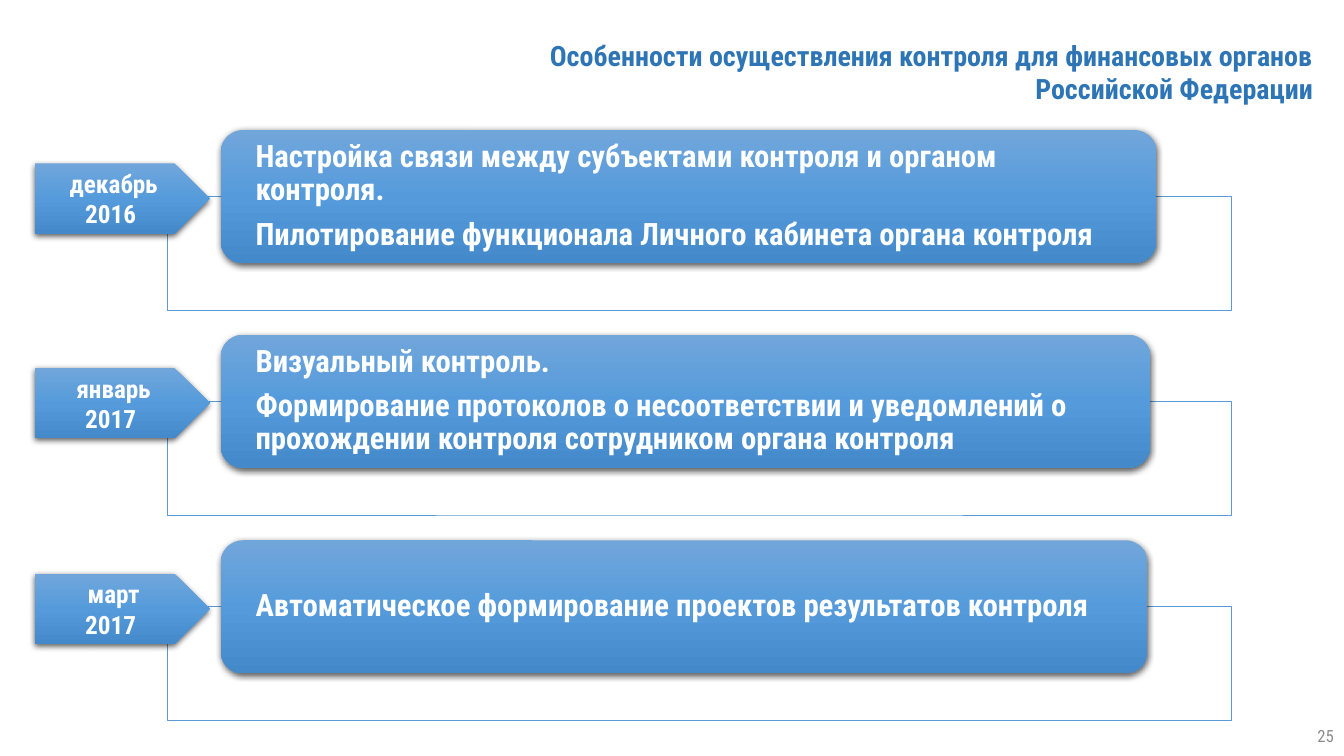
from lxml import etree
from pptx import Presentation
from pptx.dml.color import RGBColor as RGB
from pptx.enum.shapes import MSO_SHAPE as SHAPE
from pptx.enum.text import MSO_ANCHOR as ANCHOR, PP_ALIGN as ALIGN
from pptx.oxml import parse_xml
from pptx.oxml.ns import qn
from pptx.util import Pt

PX = 9144
FONT = "Roboto Condensed"
COLORS = {"white": "FFFFFF", "title": "2E75B6", "outline": "5B9BD5", "number": "8C8C8C",
          "shadow": "000000", "top": "71A6DB", "middle": "559BDB", "bottom": "448ACA"}
NS = 'xmlns:a="http://schemas.openxmlformats.org/drawingml/2006/main"'
STAGES = [
    (["декабрь", "2016 "], 928,
     ["Настройка связи между субъектами контроля и органом контроля.",
      "Пилотирование функционала Личного кабинета органа контроля"]),
    (["январь", "2017 "], 922,
     ["Визуальный контроль.",
      "Формирование протоколов о несоответствии и уведомлений о прохождении контроля "
      "сотрудником органа контроля"]),
    (["март", "2017 "], 919,
     ["Автоматическое формирование проектов результатов контроля"]),
]


def px(*lengths):
    """Turn px lengths into EMU."""
    return [length * PX for length in lengths]


def write(frame, lines, size, color, align, bold=True):
    """Fill a text frame with equally formatted paragraphs."""
    frame.word_wrap = True
    frame.text = "\n".join(lines)
    for paragraph in frame.paragraphs:
        paragraph.alignment = align
        for run in paragraph.runs:
            run.font.name = FONT
            run.font.size = Pt(size)
            run.font.bold = bold
            run.font.color.rgb = RGB.from_string(COLORS[color])


def add_glossy(slide, kind, box):
    """Add a borderless shape with the blue gradient and a soft shadow."""
    glossy = slide.shapes.add_shape(kind, *px(*box))
    glossy.line.fill.background()
    glossy.fill.background()
    stops = "".join(
        f'<a:gs pos="{pos}"><a:srgbClr val="{COLORS[name]}"/></a:gs>'
        for pos, name in ((0, "top"), (50000, "middle"), (100000, "bottom")))
    gradient = parse_xml(f'<a:gradFill {NS} rotWithShape="1"><a:gsLst>{stops}</a:gsLst>'
                         '<a:lin ang="5400000" scaled="0"/></a:gradFill>')
    properties = glossy.element.spPr
    properties.replace(properties.find(qn("a:noFill")), gradient)
    glossy.shadow.inherit = False
    properties.find(qn("a:effectLst")).append(parse_xml(
        f'<a:outerShdw {NS} blurRad="57150" dist="19050" dir="5400000" algn="ctr" rotWithShape="0">'
        f'<a:srgbClr val="{COLORS["shadow"]}"><a:alpha val="63000"/></a:srgbClr></a:outerShdw>'))
    return glossy


def add_outline(slide, box):
    """Add the thin translucent frame behind a stage card."""
    outline = slide.shapes.add_shape(SHAPE.RECTANGLE, *px(*box))
    outline.shadow.inherit = False
    outline.fill.solid()
    outline.fill.fore_color.rgb = RGB.from_string(COLORS["white"])
    white = outline.element.spPr.find(qn("a:solidFill")).find(qn("a:srgbClr"))
    etree.SubElement(white, qn("a:alpha")).set("val", "90000")
    outline.line.color.rgb = RGB.from_string(COLORS["outline"])
    outline.line.width = Pt(0.5)


def add_stage(slide, left, top, date, card_width, tasks):
    """Add one stage: frame, task card and date arrow."""
    add_outline(slide, (left + 131, top + 66, 1055, 113))
    card = add_glossy(slide, SHAPE.ROUNDED_RECTANGLE, (left + 184, top, card_width, 132))
    frame = card.text_frame
    frame.margin_left = frame.margin_right = 28 * PX
    frame.margin_top = frame.margin_bottom = 0
    frame.vertical_anchor = ANCHOR.MIDDLE
    write(frame, tasks, 22, "white", ALIGN.LEFT)
    for paragraph in frame.paragraphs:
        paragraph.line_spacing = 0.9
        paragraph.space_after = Pt(8)
    arrow = add_glossy(slide, SHAPE.PENTAGON, (left, top + 33, 173, 70))
    arrow.text_frame.vertical_anchor = ANCHOR.MIDDLE
    write(arrow.text_frame, date, 18, "white", ALIGN.CENTER)


def add_label(slide, box, text, size, color, bold, anchor):
    """Add a right-aligned text box."""
    label = slide.shapes.add_textbox(*px(*box))
    label.text_frame.vertical_anchor = anchor
    write(label.text_frame, [text], size, color, ALIGN.RIGHT, bold)


def main():
    """Build the slide and save it."""
    deck = Presentation()
    deck.slide_width, deck.slide_height = px(1333, 750)
    slide = deck.slides.add_slide(deck.slide_layouts[6])
    for index, (date, card_width, tasks) in enumerate(STAGES):
        add_stage(slide, 35, 129 + index * 407 // 2, date, card_width, tasks)
    add_label(slide, (450, 33, 862, 44),
              "Особенности осуществления контроля для финансовых органов Российской Федерации",
              20, "title", True, ANCHOR.TOP)
    add_label(slide, (1033, 710, 300, 40), "25", 12, "number", False, ANCHOR.MIDDLE)
    deck.save("out.pptx")


if __name__ == "__main__":
    main()
